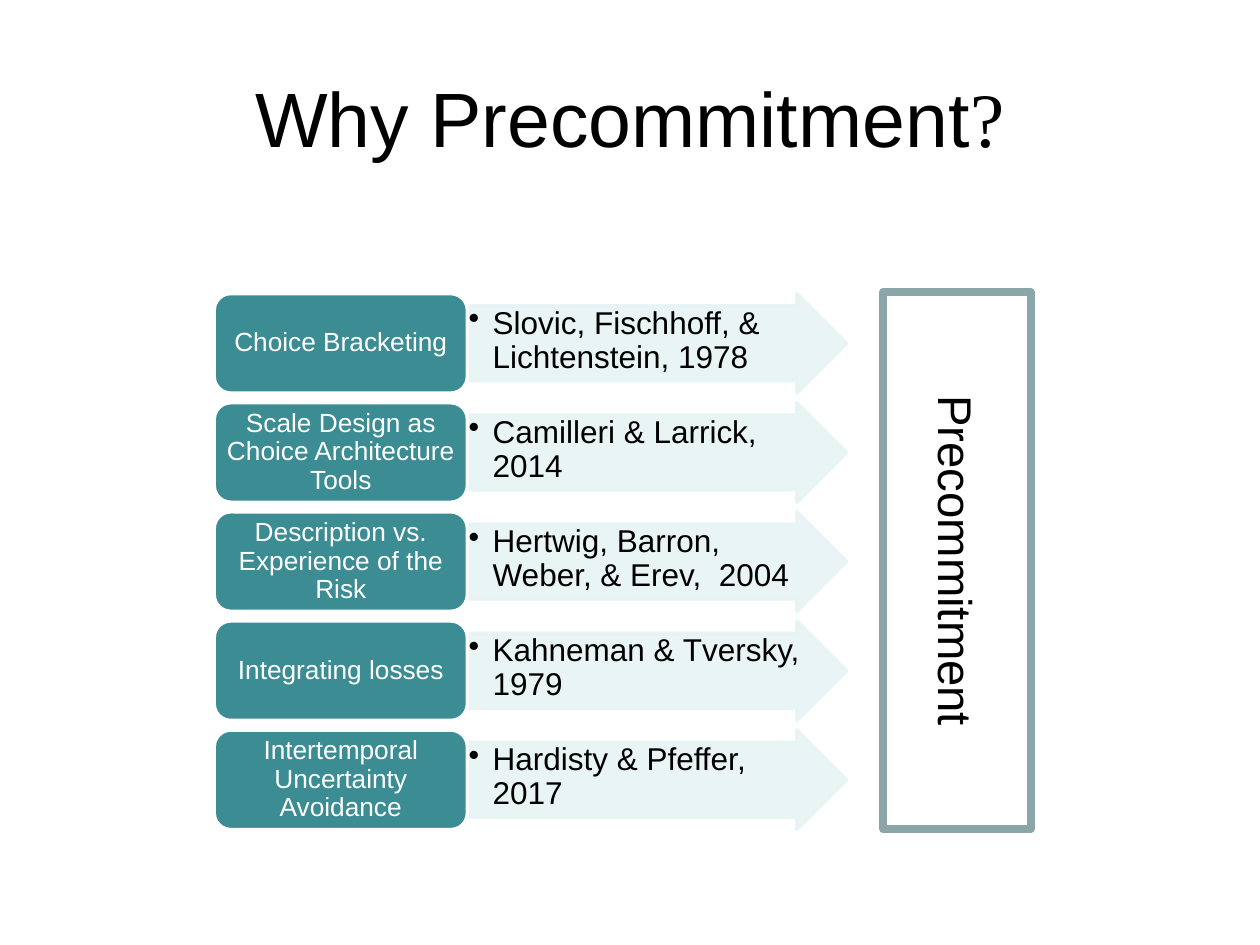
from pptx import Presentation
from pptx.dml.color import RGBColor
from pptx.enum.shapes import MSO_SHAPE
from pptx.enum.text import MSO_ANCHOR, PP_ALIGN
from pptx.oxml.ns import qn
from pptx.util import Inches, Pt
from lxml import etree

ROUNDED = MSO_SHAPE.ROUNDED_RECTANGLE
ARROW = MSO_SHAPE.RIGHT_ARROW
RECTANGLE = MSO_SHAPE.RECTANGLE
TOP, MIDDLE = MSO_ANCHOR.TOP, MSO_ANCHOR.MIDDLE
LEFT, CENTER = PP_ALIGN.LEFT, PP_ALIGN.CENTER

BLACK = RGBColor(0x00, 0x00, 0x00)
WHITE = RGBColor(0xFF, 0xFF, 0xFF)
TEAL = RGBColor(0x3C, 0x8C, 0x93)
PALE_TEAL = RGBColor(0xE7, 0xF3, 0xF4)
GREY_TEAL = RGBColor(0x8A, 0xA6, 0xA8)

REASONS = [
    ("Choice Bracketing", "Slovic, Fischhoff, & Lichtenstein, 1978"),
    ("Scale Design as Choice Architecture Tools", "Camilleri & Larrick, 2014"),
    ("Description vs. Experience of the Risk", "Hertwig, Barron, Weber, & Erev,  2004"),
    ("Integrating losses", "Kahneman & Tversky, 1979"),
    ("Intertemporal Uncertainty Avoidance", "Hardisty & Pfeffer, 2017"),
]
REASON_LEFT, REASON_WIDTH = 1.7, 2.01
SOURCE_LEFT, SOURCE_WIDTH = 3.71, 3.01
FIRST_TOP, ROW_HEIGHT, ROW_PITCH = 2.33, 0.79, 0.866


def add_block(slide, preset, box, fill, line, line_width):
    block = slide.shapes.add_shape(preset, *map(Inches, box))
    block.shadow.inherit = False
    if fill is None:
        block.fill.background()
    else:
        block.fill.solid()
        block.fill.fore_color.rgb = fill
    block.line.color.rgb = line
    block.line.width = Pt(line_width)
    return block


def write(shape, text, size, color=BLACK, align=CENTER, anchor=MIDDLE,
          margins=(0.1, 0.05), spacing=None):
    frame = shape.text_frame
    frame.word_wrap = True
    frame.vertical_anchor = anchor
    frame.margin_left = frame.margin_right = Inches(margins[0])
    frame.margin_top = frame.margin_bottom = Inches(margins[1])
    paragraph = frame.paragraphs[0]
    paragraph.text = text
    paragraph.alignment = align
    paragraph.line_spacing = spacing
    paragraph.font.name = "Arial"
    paragraph.font.size = Pt(size)
    paragraph.font.color.rgb = color
    return paragraph


def add_bullet(paragraph, indent):
    properties = paragraph._p.get_or_add_pPr()
    properties.set("marL", str(Inches(indent)))
    properties.set("indent", str(-Inches(indent)))
    bullet = etree.Element(qn("a:buChar"), char="•")
    properties.find(qn("a:defRPr")).addprevious(bullet)


def set_opacity(shape, percent):
    for color in shape._element.spPr.iter(qn("a:srgbClr")):
        etree.SubElement(color, qn("a:alpha"), val=str(percent * 1000))


def add_title(slide):
    title = slide.shapes.add_textbox(Inches(0.5), Inches(0.3), Inches(9), Inches(1.25))
    paragraph = write(title, "Why Precommitment", 44)
    question_mark = paragraph.add_run()
    question_mark.text = "?"
    question_mark.font.name = "Times New Roman"


def add_reason(slide, top, reason, source):
    # Arrow with the study behind the reason
    arrow = add_block(slide, ARROW, (SOURCE_LEFT, top, SOURCE_WIDTH, ROW_HEIGHT),
                      PALE_TEAL, PALE_TEAL, 2)
    arrow.adjustments[0] = 0.75
    arrow.adjustments[1] = 0.5
    set_opacity(arrow, 90)
    citation = write(arrow, source, 18, align=LEFT, anchor=TOP,
                     margins=(0.01, 0.01), spacing=0.9)
    add_bullet(citation, 0.19)

    # Box with the reason itself
    label = add_block(slide, ROUNDED, (REASON_LEFT, top, REASON_WIDTH, ROW_HEIGHT),
                      TEAL, WHITE, 2)
    write(label, reason, 15, WHITE, margins=(0.06, 0.03), spacing=0.9)


def add_outcome(slide):
    outcome = add_block(slide, RECTANGLE, (7.01, 2.32, 1.17, 4.26), None, GREY_TEAL, 4.5)
    write(outcome, "Precommitment", 27)
    outcome.text_frame._txBody.bodyPr.set("vert", "vert")


def main():
    presentation = Presentation()
    presentation.slide_width, presentation.slide_height = Inches(10), Inches(7.5)
    slide = presentation.slides.add_slide(presentation.slide_layouts[6])

    add_title(slide)
    for row, (reason, source) in enumerate(REASONS):
        add_reason(slide, FIRST_TOP + row * ROW_PITCH, reason, source)
    add_outcome(slide)

    presentation.save("out.pptx")


if __name__ == "__main__":
    main()
